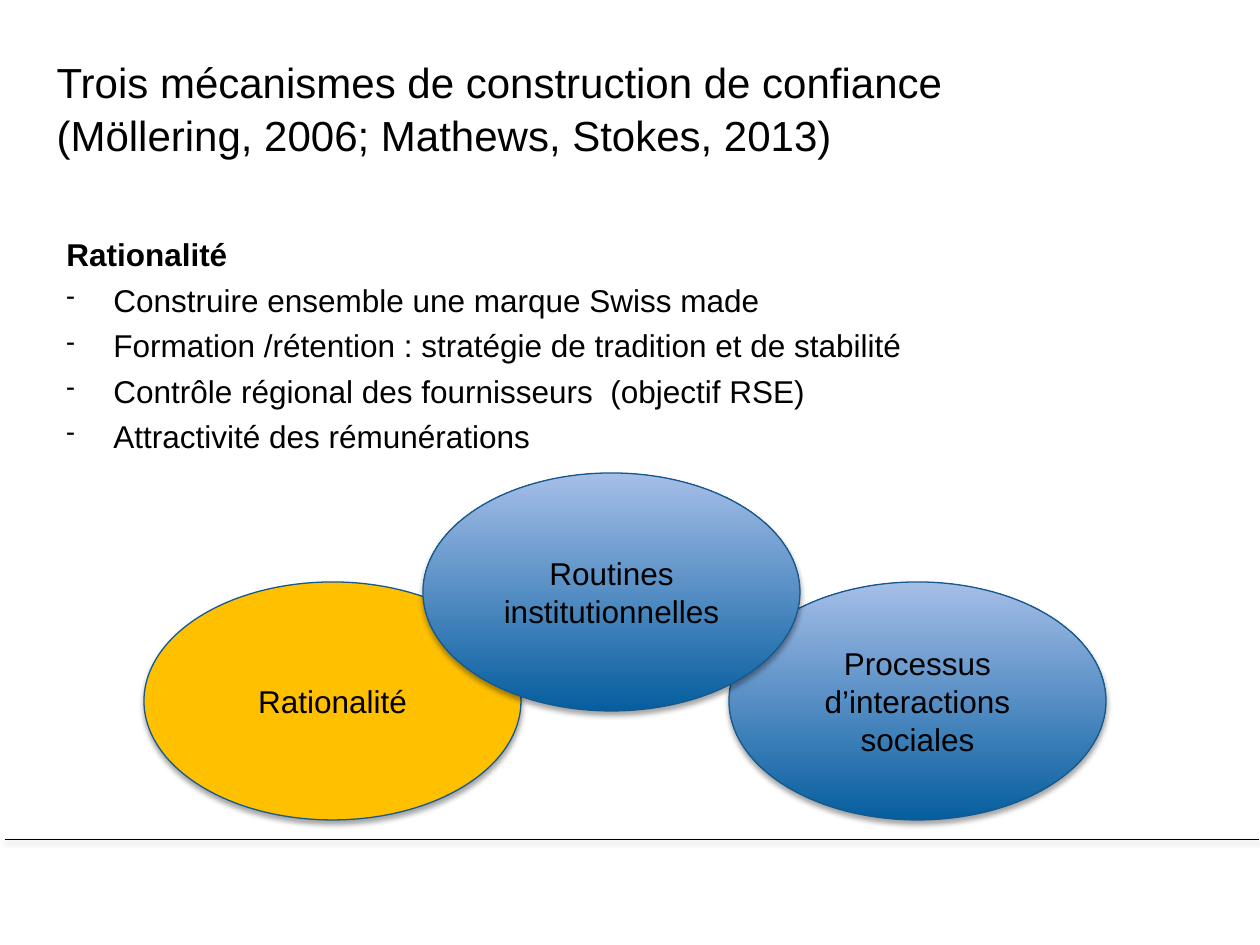
from lxml import etree
from pptx import Presentation
from pptx.dml.color import RGBColor
from pptx.enum.shapes import MSO_CONNECTOR, MSO_SHAPE
from pptx.enum.text import MSO_ANCHOR, PP_ALIGN
from pptx.oxml import parse_xml
from pptx.oxml.ns import nsdecls, qn
from pptx.util import Pt

LEFT, CENTER = PP_ALIGN.LEFT, PP_ALIGN.CENTER
TOP, MIDDLE = MSO_ANCHOR.TOP, MSO_ANCHOR.MIDDLE
OVAL, STRAIGHT = MSO_SHAPE.OVAL, MSO_CONNECTOR.STRAIGHT

# Content
TITLE = ["Trois mécanismes de construction de confiance",
         "(Möllering, 2006; Mathews, Stokes, 2013)"]
HEADING = "Rationalité"
BULLETS = ["Construire ensemble une marque Swiss made",
           "Formation /rétention : stratégie de tradition et de stabilité",
           "Contrôle régional des fournisseurs  (objectif RSE)",
           "Attractivité des rémunérations"]
# Label, left, top, highlighted; back to front
MECHANISMS = [("Processus d’interactions sociales", 729, 582, False),
              ("Rationalité", 144, 582, True),
              ("Routines institutionnelles", 423, 473, False)]
OVAL_W, OVAL_H = 377, 238
COLORS = {"text": "000000", "active": "FFC000", "dark": "065E9F",
          "light": "A5BEE8", "outline": "15598D", "rule_shadow": "808080"}
FONT = "Arial"


def px(n):
    return int(n * 914400 / 126)


def rgb(name):
    return RGBColor.from_string(COLORS[name])


def write(tf, lines, size, align, gap=0):
    tf.word_wrap = True
    for i, line in enumerate(lines):
        p = tf.paragraphs[0] if i == 0 else tf.add_paragraph()
        p.text = line
        p.alignment = align
        p.space_before = Pt(gap if i else 0)
        p.font.name = FONT
        p.font.size = Pt(size)
        p.font.color.rgb = rgb("text")


def add_shadow(s, color, alpha, dist):
    sp_pr = s._element.spPr
    for old in sp_pr.findall(qn("a:effectLst")):
        sp_pr.remove(old)
    sp_pr.append(parse_xml(
        f'<a:effectLst {nsdecls("a")}><a:outerShdw blurRad="{Pt(3.1)}" '
        f'dist="{Pt(dist)}" dir="5400000" rotWithShape="0">'
        f'<a:srgbClr val="{COLORS[color]}"><a:alpha val="{alpha * 1000}"/>'
        '</a:srgbClr></a:outerShdw></a:effectLst>'))


def add_dash(p, indent):
    p_pr = p._p.get_or_add_pPr()
    p_pr.set("marL", str(indent))
    p_pr.set("indent", str(-indent))
    size = etree.Element(qn("a:buSzPct"), val="80000")
    char = etree.Element(qn("a:buChar"), char="-")
    p_pr.extend([size, char])


def add_mechanism(slide, label, x, y, active):
    s = slide.shapes.add_shape(OVAL, px(x), px(y), px(OVAL_W), px(OVAL_H))
    if active:
        s.fill.solid()
        s.fill.fore_color.rgb = rgb("active")
    else:
        s.fill.gradient()
        s.fill.gradient_angle = 90
        for stop, name in zip(s.fill.gradient_stops, ("dark", "light")):
            stop.color.rgb = rgb(name)
            stop.position = 0 if name == "dark" else 1
    s.line.color.rgb = rgb("outline")
    s.line.width = Pt(0.75)
    add_shadow(s, "text", 35, 1.8)
    s.text_frame.vertical_anchor = MIDDLE
    write(s.text_frame, [label], 18, CENTER)


prs = Presentation()
prs.slide_width, prs.slide_height = px(1260), px(945)
slide = prs.slides.add_slide(prs.slide_layouts[5])

# Title
title = slide.shapes.title
title.left, title.top, title.width, title.height = map(px, (44, 50, 1134, 115))
title.text_frame.vertical_anchor = TOP
write(title.text_frame, TITLE, 24, LEFT, gap=1.6)

# Footer rule
rule = slide.shapes.add_connector(STRAIGHT, px(5), px(839), px(1259), px(839))
rule.line.color.rgb = rgb("text")
rule.line.width = Pt(0.25)
add_shadow(rule, "rule_shadow", 38, 1.6)

# Heading and dashed list
body = slide.shapes.add_textbox(px(54), px(229), px(1150), px(230))
write(body.text_frame, [HEADING] + BULLETS, 18, LEFT, gap=4.4)
heading, *items = body.text_frame.paragraphs
heading.font.bold = True
for p in items:
    add_dash(p, px(47))

# Overlapping mechanisms
for mechanism in MECHANISMS:
    add_mechanism(slide, *mechanism)

prs.save("out.pptx")
